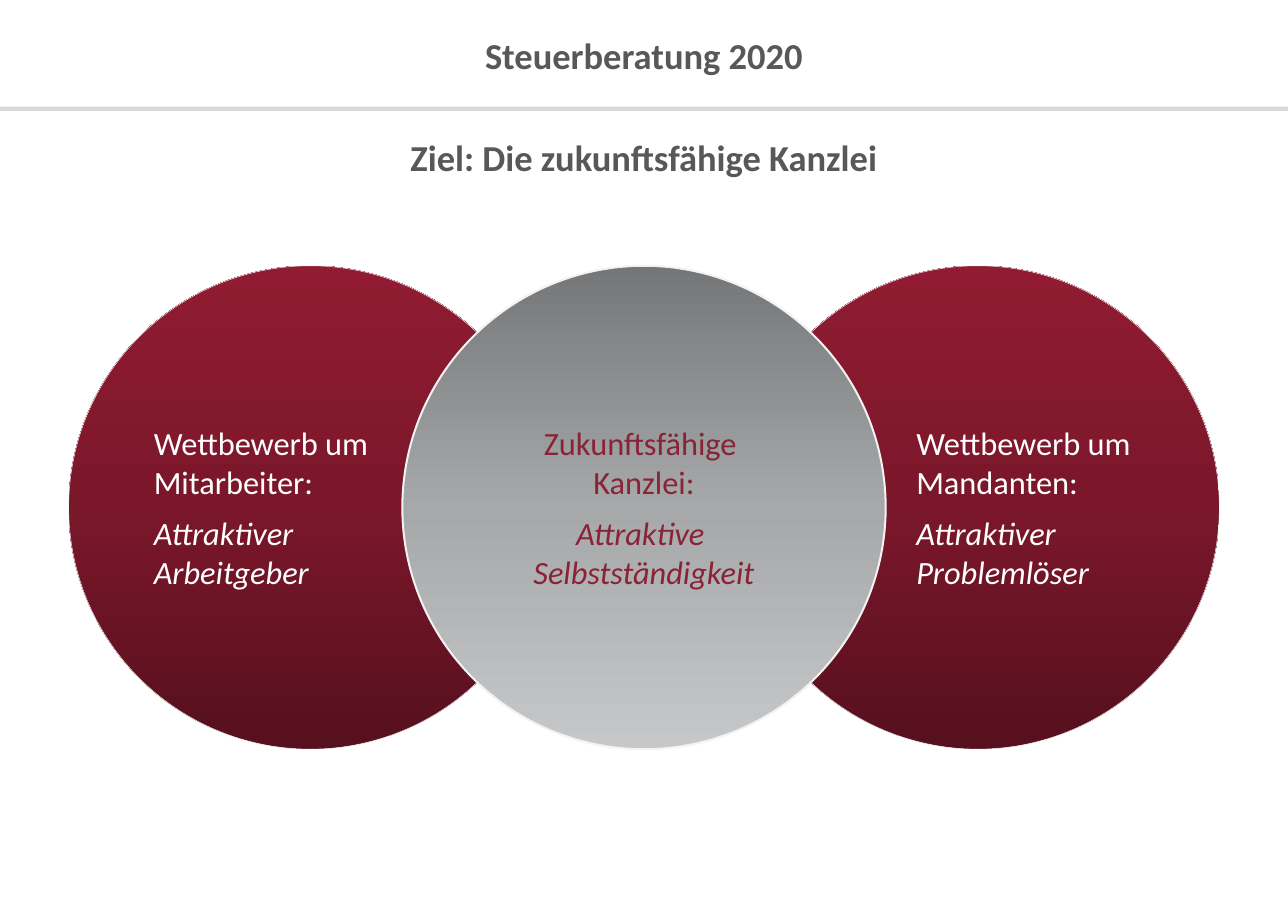
from copy import deepcopy
from dataclasses import dataclass

from pptx import Presentation
from pptx.dml.color import RGBColor as Rgb
from pptx.enum.shapes import MSO_SHAPE as Preset
from pptx.enum.text import MSO_ANCHOR as Anchor, PP_ALIGN as Align
from pptx.oxml.ns import qn
from pptx.slide import Slide
from pptx.text.text import _Paragraph as Paragraph
from pptx.util import Inches, Pt

COLORS = {
    "rule": "D9D9D9", "heading": "58585A", "outline": "F2F2F2",
    "white": "FFFFFF", "wine": "892337",
}
WINE_GRADIENT = ("56101E", "7A172A", "911B32")
GRAY_GRADIENT = ("757677", "A7A8A9", "C6C7C8")
SLIDE_WIDTH, SLIDE_HEIGHT = 8.82, 6.32
MARGIN = 0.47
DIAMETER, CIRCLE_TOP = 3.31, 1.82


@dataclass(frozen=True)
class Heading:
    text: str
    top: float
    height: float


@dataclass(frozen=True)
class Circle:
    left: float
    topic: str
    answers: tuple[str, ...]
    gradient: tuple[str, ...] = WINE_GRADIENT
    angle: int = 90
    outline: float = 0.25
    color: str = "white"
    align: Align = Align.LEFT
    inset_left: float = 0.1
    inset_right: float = 0.1
    wrap: bool = True


HEADINGS = (
    Heading("Steuerberatung 2020", 0.15, 0.45),
    Heading("Ziel: Die zukunftsfähige Kanzlei", 0.88, 0.39),
)
CIRCLES = (
    Circle(MARGIN, "Wettbewerb um Mitarbeiter:", ("Attraktiver", "Arbeitgeber")),
    Circle(SLIDE_WIDTH - MARGIN - DIAMETER, "Wettbewerb um Mandanten:",
           ("Attraktiver", "Problemlöser"), inset_left=0.75),
    Circle((SLIDE_WIDTH - DIAMETER) / 2, "Zukunftsfähige \vKanzlei:",
           ("Attraktive \vSelbstständigkeit",), GRAY_GRADIENT, 270, 1, "wine",
           Align.CENTER, 0, 0, False),
)


def style(paragraph: Paragraph, size: float, color: str, align: Align,
          bold: bool = False, italic: bool = False) -> None:
    """Format a paragraph and its runs."""
    paragraph.alignment = align
    for run in paragraph.runs:
        font = run.font
        font.name, font.size = "Calibri", Pt(size)
        font.bold, font.italic = bold, italic
        font.color.rgb = Rgb.from_string(COLORS[color])


def draw_rule(slide: Slide) -> None:
    """Draw the line below the title."""
    rule = slide.shapes.add_shape(
        Preset.RECTANGLE, 0, Inches(0.73), Inches(SLIDE_WIDTH), Inches(0.03))
    rule.shadow.inherit = False
    rule.fill.solid()
    rule.fill.fore_color.rgb = Rgb.from_string(COLORS["rule"])
    rule.line.fill.background()


def draw_heading(slide: Slide, heading: Heading) -> None:
    """Draw one centred heading."""
    box = slide.shapes.add_textbox(
        Inches(MARGIN), Inches(heading.top),
        Inches(SLIDE_WIDTH - 2 * MARGIN), Inches(heading.height))
    frame = box.text_frame
    frame.word_wrap = True
    frame.vertical_anchor = Anchor.MIDDLE
    frame.text = heading.text
    style(frame.paragraphs[0], 18, "heading", Align.CENTER, bold=True)


def draw_circle(slide: Slide, circle: Circle) -> None:
    """Draw one gradient circle with its topic and answers."""
    disc = slide.shapes.add_shape(
        Preset.OVAL, Inches(circle.left), Inches(CIRCLE_TOP),
        Inches(DIAMETER), Inches(DIAMETER))
    disc.shadow.inherit = False
    disc.line.color.rgb = Rgb.from_string(COLORS["outline"])
    disc.line.width = Pt(circle.outline)

    disc.fill.gradient()
    disc.fill.gradient_angle = circle.angle
    stop_list = next(disc.element.iter(qn("a:gsLst")))
    stop_list.append(deepcopy(stop_list[0]))
    for index, (stop, color) in enumerate(zip(disc.fill.gradient_stops, circle.gradient)):
        stop.position = index / 2
        stop.color.rgb = Rgb.from_string(color)

    frame = disc.text_frame
    frame.word_wrap = circle.wrap
    frame.vertical_anchor = Anchor.MIDDLE
    frame.margin_left = Inches(circle.inset_left)
    frame.margin_right = Inches(circle.inset_right)
    topic = frame.paragraphs[0]
    topic.text = circle.topic
    topic.space_after = Pt(6)
    style(topic, 16, circle.color, circle.align)
    for text in circle.answers:
        answer = frame.add_paragraph()
        answer.text = text
        style(answer, 16, circle.color, circle.align, italic=True)


def main() -> None:
    """Build and save the slide."""
    deck = Presentation()
    deck.slide_width, deck.slide_height = Inches(SLIDE_WIDTH), Inches(SLIDE_HEIGHT)
    slide = deck.slides.add_slide(deck.slide_layouts[6])
    draw_rule(slide)
    for heading in HEADINGS:
        draw_heading(slide, heading)
    for circle in CIRCLES:
        draw_circle(slide, circle)
    deck.save("out.pptx")


if __name__ == "__main__":
    main()
